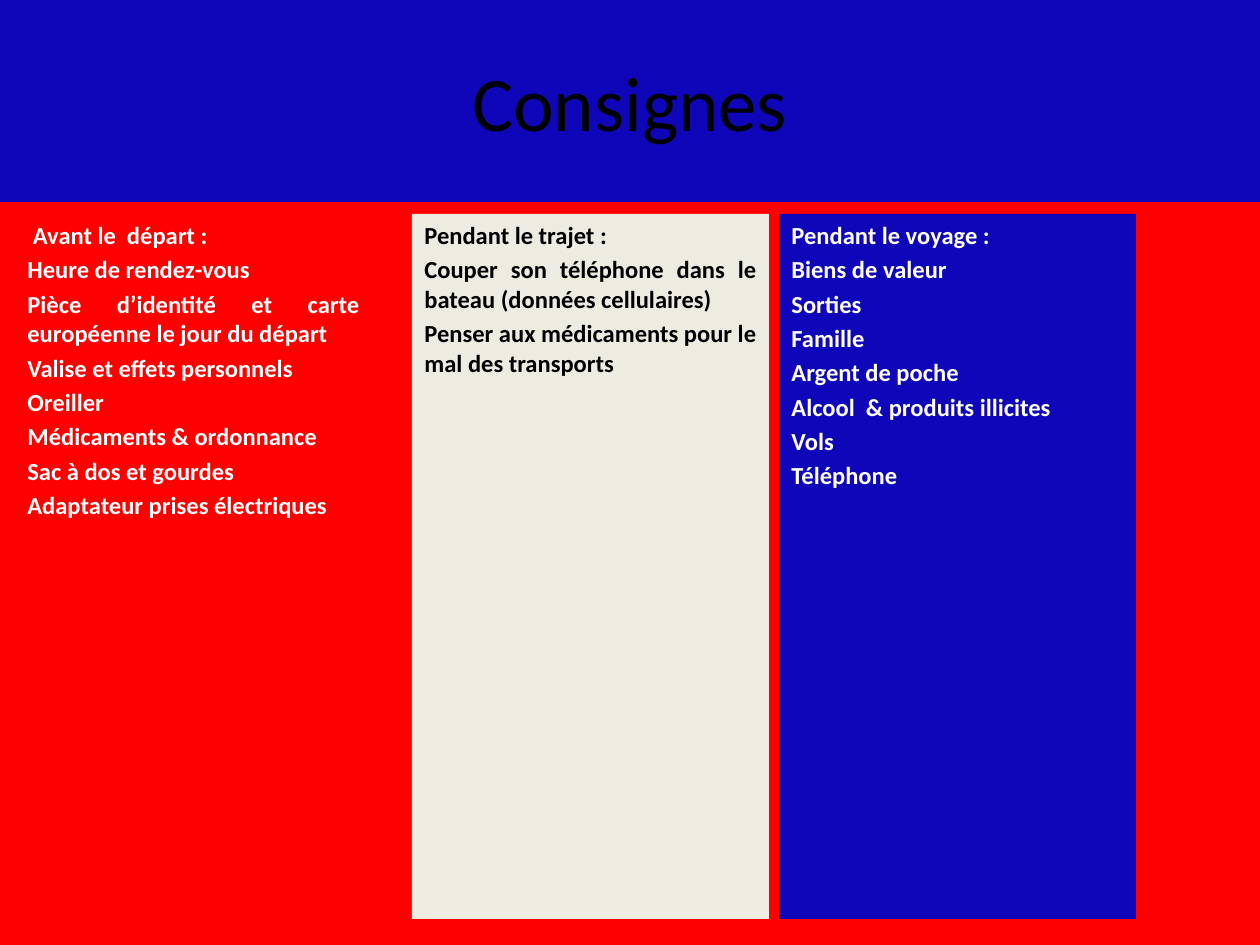
from dataclasses import dataclass

from pptx import Presentation
from pptx.dml.color import RGBColor
from pptx.enum.shapes import MSO_SHAPE
from pptx.enum.text import MSO_ANCHOR, PP_ALIGN
from pptx.util import Emu, Pt


@dataclass(frozen=True)
class Theme:
    """Colours, font and type sizes of the slide."""
    red: str = "FF0000"
    blue: str = "0F06BA"
    cream: str = "EEECE1"
    black: str = "000000"
    white: str = "FFFFFF"
    font: str = "Calibri"
    title: int = 44
    body: int = 14
    gap: float = 2.8


THEME = Theme()
COLUMNS = [
    (15, None, THEME.white, [
        " Avant le  départ :",
        "Heure de rendez-vous",
        "Pièce d’identité et carte européenne le jour du départ",
        "Valise et effets personnels",
        "Oreiller",
        "Médicaments & ordonnance",
        "Sac à dos et gourdes",
        "Adaptateur prises électriques",
    ]),
    (412, THEME.cream, THEME.black, [
        "Pendant le trajet :",
        "Couper son téléphone dans le bateau (données cellulaires)",
        "Penser aux médicaments pour le mal des transports",
    ]),
    (779, THEME.blue, THEME.white, [
        "Pendant le voyage :",
        "Biens de valeur",
        "Sorties",
        "Famille",
        "Argent de poche",
        "Alcool  & produits illicites",
        "Vols",
        "Téléphone",
    ]),
]


def px(n):
    """Turn pixels at 126 to the inch into EMU."""
    return Emu(round(n * 914400 / 126))


def add_panel(slide, box, fill, anchor):
    """Add a borderless rectangle, or a text box if unfilled, and return its frame."""
    box = [px(n) for n in box]
    if fill:
        sp = slide.shapes.add_shape(MSO_SHAPE.RECTANGLE, *box)
        sp.shadow.inherit = False
        sp.fill.solid()
        sp.fill.fore_color.rgb = RGBColor.from_string(fill)
        sp.line.fill.background()
    else:
        sp = slide.shapes.add_textbox(*box)
    tf = sp.text_frame
    tf.word_wrap = True
    tf.vertical_anchor = anchor
    return tf


def style(p, size, color, align, bold=False):
    """Set the font and alignment of a paragraph."""
    p.alignment = align
    p.font.name = THEME.font
    p.font.size = Pt(size)
    p.font.bold = bold
    p.font.color.rgb = RGBColor.from_string(color)


def add_title(slide, box, text):
    """Draw the title band."""
    p = add_panel(slide, box, THEME.blue, MSO_ANCHOR.MIDDLE).paragraphs[0]
    p.text = text
    style(p, THEME.title, THEME.black, PP_ALIGN.CENTER)


def add_column(slide, box, fill, color, lines):
    """Draw one column of instructions."""
    tf = add_panel(slide, box, fill, MSO_ANCHOR.TOP)
    for i, line in enumerate(lines):
        p = tf.add_paragraph() if i else tf.paragraphs[0]
        p.text = line
        p.space_before = Pt(THEME.gap if i else 0)
        style(p, THEME.body, color, PP_ALIGN.JUSTIFY, bold=True)


def main():
    """Build and save the slide."""
    prs = Presentation()
    prs.slide_width, prs.slide_height = px(1260), px(945)
    slide = prs.slides.add_slide(prs.slide_layouts[6])
    slide.background.fill.solid()
    slide.background.fill.fore_color.rgb = RGBColor.from_string(THEME.red)
    add_title(slide, (0, 0, 1260, 202), "Consignes")
    for left, fill, color, lines in COLUMNS:
        add_column(slide, (left, 214, 357, 705), fill, color, lines)
    prs.save("out.pptx")


if __name__ == "__main__":
    main()
